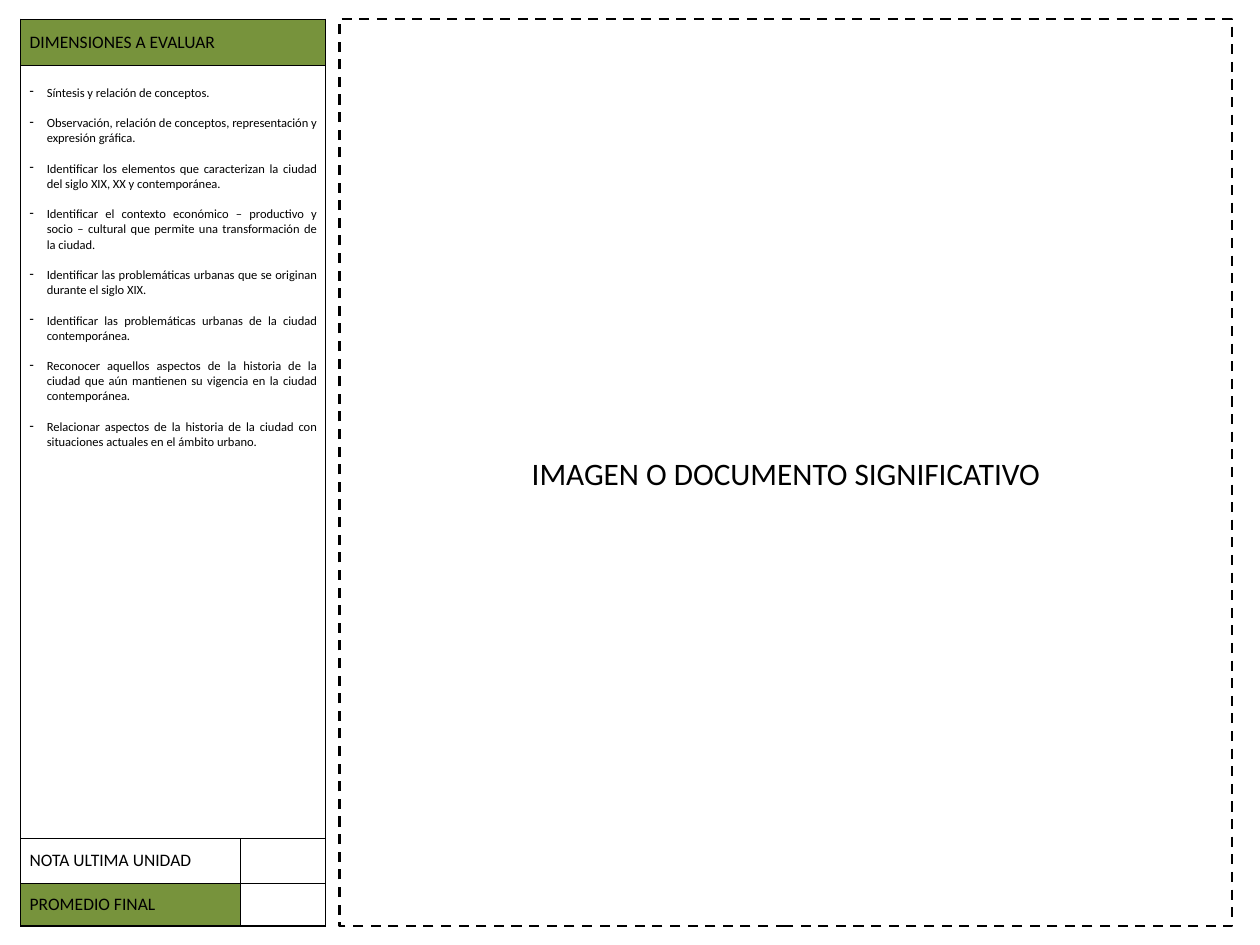
from lxml import etree
from pptx import Presentation
from pptx import util as u
from pptx.dml.color import RGBColor
from pptx.enum import dml, shapes, text
from pptx.oxml.ns import qn

COLORS = {"ink": "000000", "green": "77933C", "white": "FFFFFF"}
FONT = "Calibri"
DIMENSIONS = [
    "Síntesis y relación de conceptos.",
    "Observación, relación de conceptos, representación y expresión gráfica.",
    "Identificar los elementos que caracterizan la ciudad del siglo XIX, XX y contemporánea.",
    "Identificar el contexto económico – productivo y socio – cultural que permite una "
    "transformación de la ciudad.",
    "Identificar las problemáticas urbanas que se originan durante el siglo XIX.",
    "Identificar las problemáticas urbanas de la ciudad contemporánea.",
    "Reconocer aquellos aspectos de la historia de la ciudad que aún mantienen su vigencia "
    "en la ciudad contemporánea.",
    "Relacionar aspectos de la historia de la ciudad con situaciones actuales en el ámbito urbano.",
]


def style_paragraph(paragraph, size, alignment):
    paragraph.alignment = alignment
    for run in paragraph.runs:
        run.font.size = u.Pt(size)
        run.font.name = FONT
        run.font.color.rgb = RGBColor.from_string(COLORS["ink"])


def add_borders(cell, widths):
    properties = cell._tc.get_or_add_tcPr()
    for side, width in widths.items():
        line = etree.SubElement(properties, qn(f"a:ln{side}"), w=str(u.Pt(width)))
        fill = etree.SubElement(line, qn("a:solidFill"))
        etree.SubElement(fill, qn("a:srgbClr"), val=COLORS["ink"])


presentation = Presentation()
presentation.slide_width = u.Inches(14)
presentation.slide_height = u.Inches(10.5)
slide = presentation.slides.add_slide(presentation.slide_layouts[6])

# Page grid: 1400 columns by 1050 rows
unit = presentation.slide_width // 1400
top, height = 21 * unit, 1008 * unit
column_widths = [244, 95]
row_heights = [52, 859, 49, 48]

# Evaluation table
table = slide.shapes.add_table(
    4, 2, 23 * unit, top, sum(column_widths) * unit, height).table
for column, width in zip(table.columns, column_widths):
    column.width = width * unit
for row, row_height in zip(table.rows, row_heights):
    row.height = row_height * unit
for row in range(2):
    table.cell(row, 0).merge(table.cell(row, 1))

# Borders: thick outside and around merged rows, thin inside the grades
for row in range(4):
    for column in range(2):
        cell = table.cell(row, column)
        merged = row < 2
        widths = {
            "L": 1 if column == 0 else 0.5,
            "R": 1 if merged or column == 1 else 0.5,
            "T": 1 if 0 < row < 3 else 0.5,
            "B": 0.5 if row == 2 else 1,
        }
        if cell.is_spanned:
            del widths["L"]
        add_borders(cell, widths)
        green = row == 0 or (row == 3 and column == 0)
        cell.fill.solid()
        cell.fill.fore_color.rgb = RGBColor.from_string(COLORS["green" if green else "white"])

# Row labels
labels = {0: "DIMENSIONES A EVALUAR", 2: "NOTA ULTIMA UNIDAD", 3: "PROMEDIO FINAL"}
for row, label in labels.items():
    cell = table.cell(row, 0)
    cell.vertical_anchor = text.MSO_ANCHOR.MIDDLE
    cell.text_frame.text = label
    style_paragraph(cell.text_frame.paragraphs[0], 14, text.PP_ALIGN.JUSTIFY)

# Dashed list of dimensions
list_cell = table.cell(1, 0)
list_cell.margin_top = 22 * unit
list_cell.text_frame.text = "\n".join(DIMENSIONS)
for paragraph in list_cell.text_frame.paragraphs:
    style_paragraph(paragraph, 10, text.PP_ALIGN.JUSTIFY)
    paragraph.space_after = u.Pt(12.2)
    properties = paragraph._p.get_or_add_pPr()
    properties.set("marL", str(19 * unit))
    properties.set("indent", str(-19 * unit))
    etree.SubElement(properties, qn("a:buChar"), char="-")

# Dashed frame for the image or document
frame = slide.shapes.add_shape(
    shapes.MSO_SHAPE.RECTANGLE, 377 * unit, top, 992 * unit, height)
frame.shadow.inherit = False
frame.fill.background()
frame.line.color.rgb = RGBColor.from_string(COLORS["ink"])
frame.line.width = u.Pt(2)
frame.line.dash_style = dml.MSO_LINE.DASH
frame.text_frame.text = "IMAGEN O DOCUMENTO SIGNIFICATIVO"
frame.text_frame.vertical_anchor = text.MSO_ANCHOR.MIDDLE
style_paragraph(frame.text_frame.paragraphs[0], 25, text.PP_ALIGN.CENTER)

presentation.save("out.pptx")
